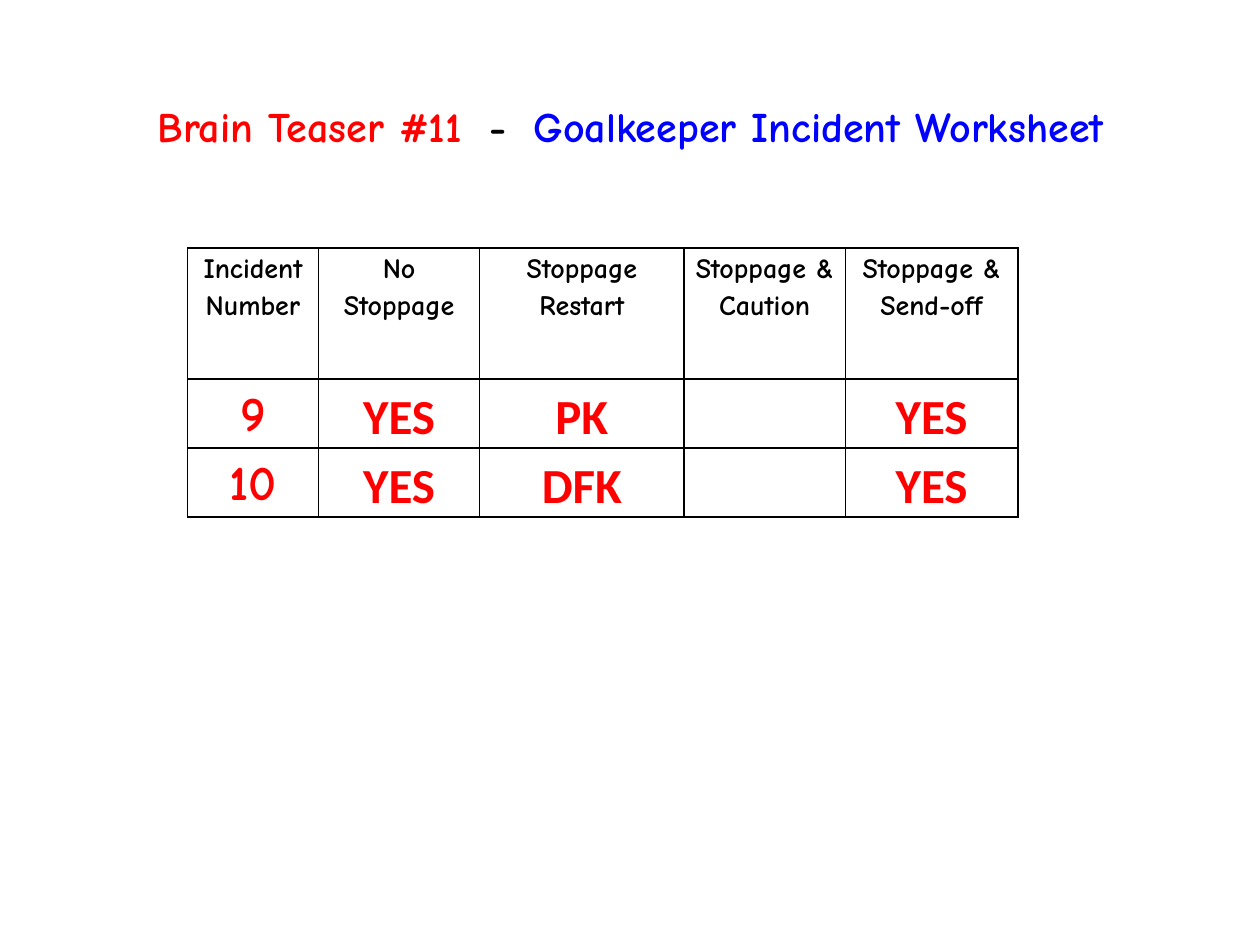
from lxml.etree import SubElement as Sub
from pptx import Presentation
from pptx.dml.color import RGBColor as Rgb
from pptx.enum.text import MSO_ANCHOR as Anchor, PP_ALIGN as Align
from pptx.oxml.ns import qn
from pptx.util import Cm, Pt

RED, BLACK, BLUE = "FF0000", "000000", "0000FF"
COMIC, PLAIN = "Comic Neue", "Calibri"
HEADS = ["Incident Number", "No Stoppage", "Stoppage Restart",
         "Stoppage & Caution", "Stoppage & Send-off"]
ROWS = [["9", "YES", "PK", "", "YES"], ["10", "YES", "DFK", "", "YES"]]
WIDTHS = [2.64, 3.25, 4.12, 3.25, 3.48]
HEIGHTS = [2.64, 1.32, 1.32]


def apply(item, form):
    """Set each attribute of an item from a dict."""
    for name, value in form.items():
        setattr(item, name, value)


def paint(fill, color):
    """Give a fill a solid hex color."""
    fill.solid()
    fill.fore_color.rgb = Rgb.from_string(color)


def write(para, text, size, color, face=COMIC):
    """Add a bold run to a paragraph."""
    run = para.add_run()
    run.text = text
    apply(run.font, dict(size=Pt(size), name=face, bold=True))
    paint(run.font.fill, color)
    return run


def rule(cell, color=BLACK, width=1):
    """Draw all four borders of a cell."""
    props = cell._tc.get_or_add_tcPr()
    for i, side in enumerate(("lnL", "lnR", "lnT", "lnB")):
        line = Sub(props, qn(f"a:{side}"), w=str(Pt(width)))
        fill = Sub(line, qn("a:solidFill"))
        Sub(fill, qn("a:srgbClr"), val=color)
        props.insert(i, line)


def title(slide, left, top, width, height):
    """Place the three-color heading in its box."""
    frame = slide.shapes.add_textbox(left, top, width, height).text_frame
    apply(frame, dict(word_wrap=False, vertical_anchor=Anchor.MIDDLE))
    para = frame.paragraphs[0]
    para.alignment = Align.CENTER
    parts = [("Brain Teaser #11", RED), (" ", RED), ("-", BLACK),
             (" ", BLACK), ("Goalkeeper Incident Worksheet", BLUE)]
    for text, color in parts:
        run = write(para, text, 24, color)
        if text == " ":
            run._r.get_or_add_rPr().set("spc", "700")


def sheet(slide, left, top):
    """Place the incident table at a corner."""
    data = [HEADS] + ROWS
    table = slide.shapes.add_table(
        len(data), len(HEADS), left, top,
        Cm(sum(WIDTHS)), Cm(sum(HEIGHTS))).table
    apply(table, dict(first_row=False, horz_banding=False))
    for col, width in zip(table.columns, WIDTHS):
        col.width = Cm(width)
    for r, texts in enumerate(data):
        table.rows[r].height = Cm(HEIGHTS[r])
        for c, text in enumerate(texts):
            cell = table.cell(r, c)
            apply(cell, dict(margin_left=Cm(0.18), margin_right=Cm(0.18),
                             margin_top=0, margin_bottom=0))
            cell.fill.background()
            rule(cell)
            para = cell.text_frame.paragraphs[0]
            apply(para, dict(alignment=Align.CENTER, line_spacing=1.15,
                             space_after=Pt(10)))
            if text:
                size, color = (28, RED) if r else (16, BLACK)
                write(para, text, size, color, PLAIN if r and c else COMIC)


def main():
    """Build and save the worksheet slide."""
    deck = Presentation()
    apply(deck, dict(slide_width=Cm(25.4), slide_height=Cm(19.05)))
    slide = deck.slides.add_slide(deck.slide_layouts[6])
    sheet(slide, Cm(3.78), Cm(5))
    title(slide, Cm(1.14), Cm(1.9), Cm(23.14), Cm(1.27))
    deck.save("out.pptx")


if __name__ == "__main__":
    main()
